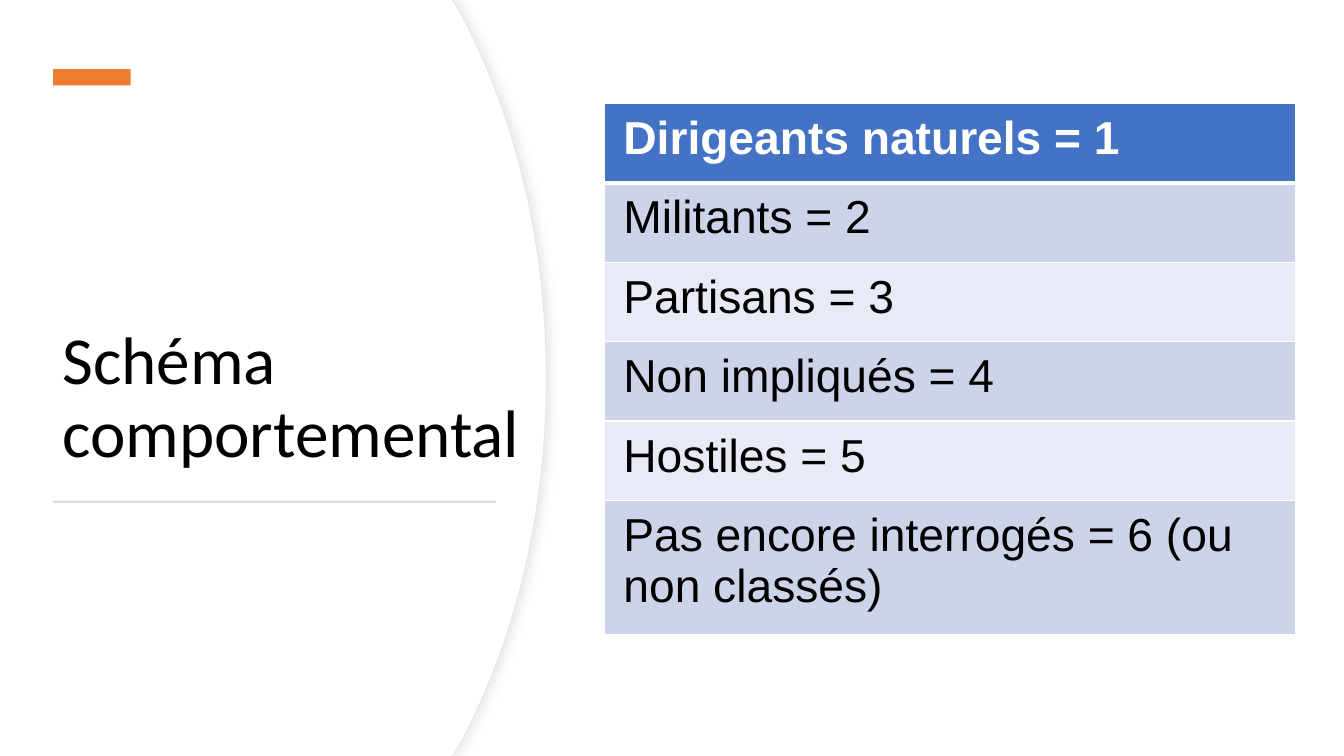
from lxml.etree import SubElement
from pptx import Presentation
from pptx.dml.color import RGBColor
from pptx.enum.shapes import MSO_SHAPE as Preset
from pptx.enum.text import MSO_ANCHOR as Anchor, MSO_AUTO_SIZE as AutoSize, PP_ALIGN as Align
from pptx.oxml import parse_xml
from pptx.oxml.ns import nsdecls, qn
from pptx.util import Cm, Pt

COLORS = {
    "white": "FFFFFF",
    "black": "000000",
    "panel_edge": "E6E6E6",
    "shadow": "D8D8D8",
    "accent": "ED7D31",
    "rule": "D5D5D5",
    "header": "4472C4",
    "band_dark": "CDD4EA",
    "band_light": "E8EBF5",
}
SLIDE_WIDTH, SLIDE_HEIGHT = 33.87, 19.05
CATEGORIES = [
    "Dirigeants naturels = 1",
    "Militants = 2",
    "Partisans = 3",
    "Non impliqués = 4",
    "Hostiles = 5",
    "Pas encore interrogés = 6 (ou non classés)",
]


def rgb(name):
    return RGBColor.from_string(COLORS[name])


def paint(shape, color):
    shape.shadow.inherit = False
    shape.fill.solid()
    shape.fill.fore_color.rgb = rgb(color)
    shape.line.fill.background()


def write(paragraph, text, font, size, color, bold=False):
    run = paragraph.add_run()
    run.text = text
    run.font.name = font
    run.font.size = Pt(size)
    run.font.bold = bold
    run.font.color.rgb = rgb(color)


def bend(segment, controls):
    """Turn a straight freeform segment into a cubic curve with two control points (cm)."""
    segment.tag = qn("a:cubicBezTo")
    for position, (x, y) in enumerate(controls):
        point = parse_xml(f'<a:pt {nsdecls("a")} x="{Cm(x)}" y="{Cm(y)}"/>')
        segment.insert(position, point)


def add_curved_panel(slide, reach):
    """Add a full-height panel whose right edge bulges out to reach (cm)."""
    def mirrored(points):
        return [(x, SLIDE_HEIGHT - y) for x, y in reversed(points)]

    upper = [(reach - 2.36, 0), (reach - 2.16, 0.33)]
    controls = [(reach - 0.79, 2.9), (reach, 6.07)]
    outline = upper + [(reach, SLIDE_HEIGHT / 2)] + mirrored(upper) + [(0, SLIDE_HEIGHT)]
    builder = slide.shapes.build_freeform(0, 0)
    builder.add_line_segments([(Cm(x), Cm(y)) for x, y in outline], close=True)
    panel = builder.convert_to_shape()
    segments = list(panel._element.iter(qn("a:lnTo")))
    bend(segments[2], controls)
    bend(segments[3], mirrored(controls))
    paint(panel, "white")
    return panel


def add_edge_shadow(panel):
    panel.line.color.rgb = rgb("panel_edge")
    panel.line.width = Pt(0.75)
    effects = panel._element.spPr.find(qn("a:effectLst"))
    effects.append(parse_xml(
        f'<a:outerShdw {nsdecls("a")} blurRad="{Pt(6)}" dist="{Pt(3)}" dir="0" '
        f'algn="l" rotWithShape="0"><a:srgbClr val="{COLORS["shadow"]}">'
        '<a:alpha val="50000"/></a:srgbClr></a:outerShdw>'))


def add_bar(slide, left, top, width, height, color):
    bar = slide.shapes.add_shape(Preset.RECTANGLE, Cm(left), Cm(top), Cm(width), Cm(height))
    paint(bar, color)
    return bar


def place_title(slide, text):
    title = slide.shapes.title
    title.left, title.top, title.width, title.height = Cm(1.32), Cm(3.12), Cm(12.42), Cm(8.89)
    frame = title.text_frame
    frame.word_wrap = True
    frame.auto_size = AutoSize.NONE
    frame.vertical_anchor = Anchor.BOTTOM
    paragraph = frame.paragraphs[0]
    paragraph.alignment = Align.LEFT
    paragraph.line_spacing = 0.9
    write(paragraph, text, "Calibri", 48, "black")
    slide.shapes._spTree.append(title._element)  # bring in front of the panels


def set_borders(cell, widths):
    """Draw white borders; widths maps L, R, T and B to points."""
    properties = cell._tc.get_or_add_tcPr()
    for position, (side, width) in enumerate(widths.items()):
        border = parse_xml(f'<a:ln{side} {nsdecls("a")} w="{Pt(width)}"/>')
        fill = SubElement(border, qn("a:solidFill"))
        SubElement(fill, qn("a:srgbClr"), val=COLORS["white"])
        properties.insert(position, border)


def add_category_table(slide, categories):
    heights = [2.0] * (len(categories) - 1) + [3.39]
    table = slide.shapes.add_table(
        len(categories), 1, Cm(15.24), Cm(2.61), Cm(17.42), Cm(sum(heights))).table
    for index, (category, height) in enumerate(zip(categories, heights)):
        table.rows[index].height = Cm(height)
        cell = table.cell(index, 0)
        is_header = index == 0
        band = "band_dark" if index % 2 else "band_light"
        cell.fill.solid()
        cell.fill.fore_color.rgb = rgb("header" if is_header else band)
        set_borders(cell, {"L": 1, "R": 1, "T": 3 if index == 1 else 1, "B": 3 if is_header else 1})
        cell.margin_left = cell.margin_right = Cm(0.47)
        cell.margin_top = cell.margin_bottom = Cm(0.23)
        write(cell.text_frame.paragraphs[0], category, "Arial", 33,
              "white" if is_header else "black", bold=is_header)


def main():
    presentation = Presentation()
    presentation.slide_width = Cm(SLIDE_WIDTH)
    presentation.slide_height = Cm(SLIDE_HEIGHT)
    slide = presentation.slides.add_slide(presentation.slide_layouts[5])
    add_edge_shadow(add_curved_panel(slide, 13.77))
    add_curved_panel(slide, 13.74)
    place_title(slide, "Schéma comportemental")
    accent = add_bar(slide, 2.11, 0.97, 0.41, 1.96, "accent")
    accent.rotation = 90
    add_bar(slide, 1.34, 12.62, 11.16, 0.05, "rule")
    add_category_table(slide, CATEGORIES)
    presentation.save("out.pptx")


if __name__ == "__main__":
    main()
